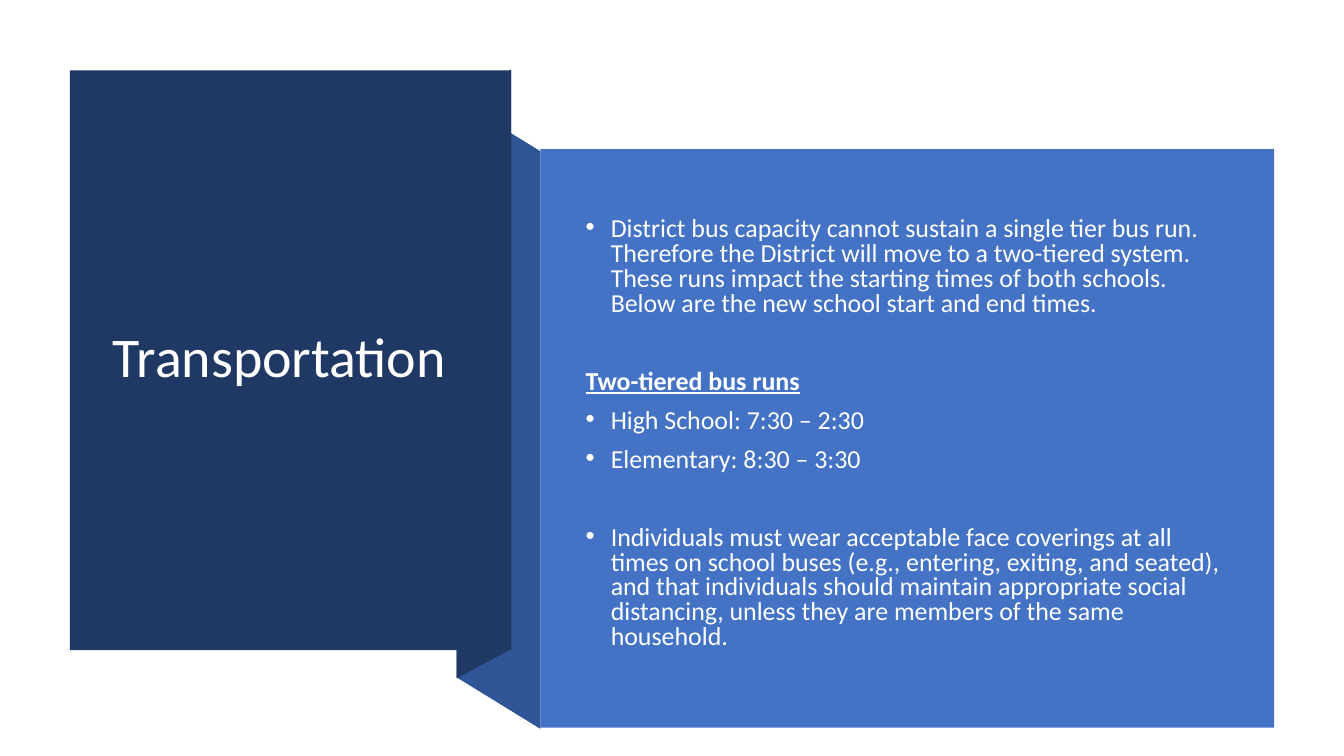
import pptx
import pptx.dml.color
import pptx.enum.shapes
import pptx.enum.text
import pptx.oxml
import pptx.oxml.ns
import pptx.util

deck = pptx.Presentation()
deck.slide_width = pptx.util.Inches(13.33)
deck.slide_height = pptx.util.Inches(7.5)
COLUMN = deck.slide_width / 100
ROW = deck.slide_height / 100
FONT = "Calibri"
NAVY, BLUE, MID_BLUE, WHITE, SOFT_WHITE = "203864", "4472C4", "2F5597", "FFFFFF", "FEFFFF"
TITLE_PANEL = (5.21, 9.33, 32.82, 76.67)
BODY_PANEL = (40.2, 19.73, 54.6, 76.53)
FOLD_LEFT = 33.98
INDENT = pptx.util.Inches(0.25)
BODY_PARAS = [
    ("District bus capacity cannot sustain a single tier bus run. Therefore the District will move "
     "to a two-tiered system. These runs impact the starting times of both schools. "
     "Below are the new school start and end times.", True, 0),
    ("Two-tiered bus runs", False, 38),
    ("High School: 7:30 – 2:30", True, 10),
    ("Elementary: 8:30 – 3:30", True, 10),
    ("Individuals must wear acceptable face coverings at all times on school buses "
     "(e.g., entering, exiting, and seated), and that individuals should maintain appropriate "
     "social distancing, unless they are members of the same household.", True, 38),
]


def color(value):
    return pptx.dml.color.RGBColor.from_string(value)


def place(box):
    left, top, width, height = box
    return [round(left * COLUMN), round(top * ROW), round(width * COLUMN), round(height * ROW)]


def paint(shape, fill):
    shape.shadow.inherit = False
    shape.fill.solid()
    shape.fill.fore_color.rgb = color(fill)
    shape.line.fill.background()


def add_panel(page, box, fill):
    panel = page.shapes.add_shape(pptx.enum.shapes.MSO_SHAPE.RECTANGLE, *place(box))
    paint(panel, fill)


def add_fold(page, box, slant, fill):
    left, top, width, height = box
    right = left + width
    corners = [(right, top + slant), (right, top + slant + height), (left, top + height), (left, top)]
    points = [(x * COLUMN, y * ROW) for x, y in corners]
    builder = page.shapes.build_freeform(*points[0])
    builder.add_line_segments(points[1:])
    paint(builder.convert_to_shape(), fill)


def add_span(para, text, size, fill):
    span = para.add_run()
    span.text = text
    span.font.name = FONT
    span.font.size = pptx.util.Pt(size)
    span.font.color.rgb = color(fill)
    return span


def add_bullet(para):
    properties = para._p.get_or_add_pPr()
    properties.set("marL", str(INDENT))
    properties.set("indent", str(-INDENT))
    namespace = pptx.oxml.ns.nsdecls("a")
    properties.append(pptx.oxml.parse_xml(f'<a:buFont {namespace} typeface="Arial"/>'))
    properties.append(pptx.oxml.parse_xml(f'<a:buChar {namespace} char="•"/>'))


def add_title(page, box):
    left, top, width, height = box
    add_panel(page, box, NAVY)
    title = page.shapes.title
    title.left, title.top, title.width, title.height = place(
        (left + 2.44, top + 4.94, width - 4.99, height - 10.14))
    page.shapes.element.append(title.element)
    frame = title.text_frame
    frame.word_wrap = True
    frame.auto_size = pptx.enum.text.MSO_AUTO_SIZE.NONE
    frame.vertical_anchor = pptx.enum.text.MSO_ANCHOR.MIDDLE
    para = frame.paragraphs[0]
    para.alignment = pptx.enum.text.PP_ALIGN.LEFT
    para.line_spacing = 0.9
    add_span(para, "Transportation", 40, WHITE)


def add_body(page, box):
    left, top, width, height = box
    add_panel(page, box, BLUE)
    body = page.shapes.add_textbox(*place((left + 2.63, top + 8.4, width - 5.77, height - 16)))
    frame = body.text_frame
    frame.word_wrap = True
    frame.vertical_anchor = pptx.enum.text.MSO_ANCHOR.TOP
    for index, (text, bulleted, space) in enumerate(BODY_PARAS):
        para = frame.add_paragraph() if index else frame.paragraphs[0]
        para.line_spacing = 0.8
        para.space_before = pptx.util.Pt(space)
        if bulleted:
            add_bullet(para)
        span = add_span(para, text, 18.5, SOFT_WHITE)
        span.font.bold = span.font.underline = not bulleted


def add_folded_slide():
    page = deck.slides.add_slide(deck.slide_layouts[5])
    title_right = TITLE_PANEL[0] + TITLE_PANEL[2]
    add_fold(page, (FOLD_LEFT, 13.2, BODY_PANEL[0] - FOLD_LEFT, 76.4), 6.8, MID_BLUE)
    add_fold(page, (FOLD_LEFT, 13.07, title_right - FOLD_LEFT, 76.67), -3.87, NAVY)
    add_title(page, TITLE_PANEL)
    add_body(page, BODY_PANEL)


add_folded_slide()
deck.save("out.pptx")
